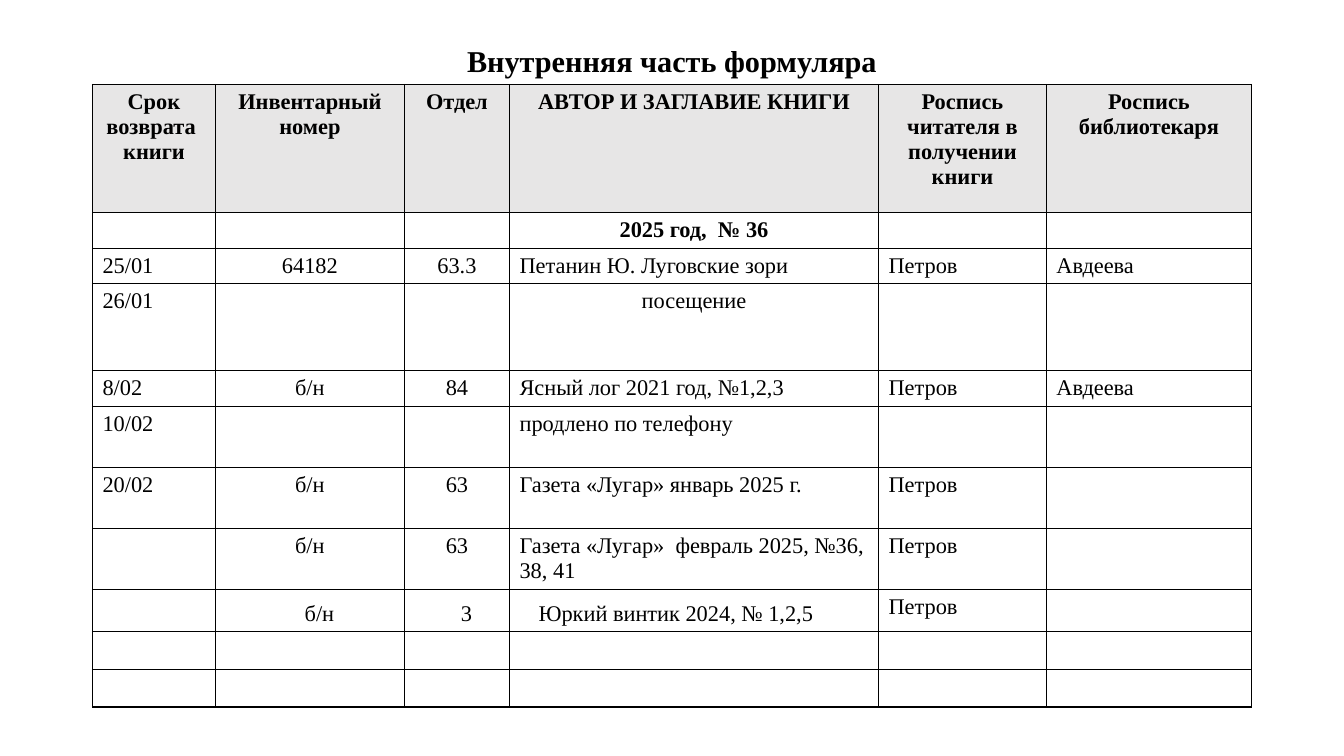
from dataclasses import dataclass

import pptx
import pptx.dml.color
import pptx.enum.text
import pptx.oxml
import pptx.oxml.ns
import pptx.util
from pptx.util import Cm

Align = pptx.enum.text.PP_ALIGN


@dataclass(frozen=True)
class Theme:
    font: str = "Times New Roman"
    ink: str = "000000"
    header_fill: str = "E7E6E6"
    body_fill: str = "FFFFFF"
    title_size: float = 21.6
    table_size: float = 16
    border_width: float = 1


COLUMN_WIDTHS = [3.1, 4.76, 2.65, 9.3, 4.23, 5.17]
ROW_HEIGHTS = [3.23, 0.9, 0.89, 2.19, 0.9, 1.54, 1.54, 1.54, 1.05, 0.95, 0.95]
CENTRED_COLUMNS = (1, 2)
TITLE_COLUMN = 3
YEAR_ROW, VISIT_ROW, INDENTED_ROW = 1, 3, 8

LOANS = [
    ["Срок\nвозврата \nкниги", "Инвентарный номер", "Отдел", "АВТОР И ЗАГЛАВИЕ КНИГИ",
     "Роспись читателя в получении книги", "Роспись библиотекаря"],
    ["", "", "", "2025 год,  № 36", "", ""],
    ["25/01", "64182", "63.3", "Петанин Ю. Луговские зори", "Петров", "Авдеева"],
    ["26/01", "", "", "посещение", "", ""],
    ["8/02", "б/н", "84", "Ясный лог 2021 год, №1,2,3", "Петров", "Авдеева"],
    ["10/02", "", "", "продлено по телефону", "", ""],
    ["20/02", "б/н", "63", "Газета «Лугар» январь 2025 г.", "Петров", ""],
    ["", "б/н", "63", "Газета «Лугар»  февраль 2025, №36, 38, 41", "Петров", ""],
    ["", "б/н", "3", "Юркий винтик 2024, № 1,2,5", "Петров", ""],
    [""] * 6,
    [""] * 6,
]


class SlideBuilder:
    def __init__(self, presentation, theme):
        self.theme = theme
        self.slide = presentation.slides.add_slide(presentation.slide_layouts[5])

    def style(self, paragraph, size, bold, alignment):
        paragraph.alignment = alignment
        font = paragraph.font
        font.name, font.size, font.bold = self.theme.font, pptx.util.Pt(size), bold
        font.color.rgb = pptx.dml.color.RGBColor.from_string(self.theme.ink)

    def title(self, text, left, top, width, height):
        title = self.slide.shapes.title
        title.left, title.top, title.width, title.height = map(Cm, (left, top, width, height))
        frame = title.text_frame
        frame.text = text
        frame.auto_size = pptx.enum.text.MSO_AUTO_SIZE.NONE
        frame.vertical_anchor = pptx.enum.text.MSO_ANCHOR.MIDDLE
        paragraph = frame.paragraphs[0]
        paragraph.line_spacing = 0.9
        self.style(paragraph, self.theme.title_size, True, Align.CENTER)

    def table(self, rows, left, top):
        table = self.slide.shapes.add_table(
            len(rows), len(COLUMN_WIDTHS), Cm(left), Cm(top),
            Cm(sum(COLUMN_WIDTHS)), Cm(sum(ROW_HEIGHTS))).table
        for column, width in zip(table.columns, COLUMN_WIDTHS):
            column.width = Cm(width)
        for row, height in zip(table.rows, ROW_HEIGHTS):
            row.height = Cm(height)
        for row_index, texts in enumerate(rows):
            for column_index, text in enumerate(texts):
                self.cell(table.cell(row_index, column_index), text, row_index, column_index)

    def cell(self, cell, text, row, column):
        is_header = row == 0
        is_centred = (row in (0, YEAR_ROW) or column in CENTRED_COLUMNS
                      or (row == VISIT_ROW and column == TITLE_COLUMN))
        is_indented = row == INDENTED_ROW and 1 <= column <= TITLE_COLUMN
        alignment = Align.CENTER if is_centred else Align.JUSTIFY if is_indented else Align.LEFT
        self.borders(cell)
        cell.fill.solid()
        cell.fill.fore_color.rgb = pptx.dml.color.RGBColor.from_string(
            self.theme.header_fill if is_header else self.theme.body_fill)
        cell.text = text
        for paragraph in cell.text_frame.paragraphs:
            self.style(paragraph, self.theme.table_size, row <= YEAR_ROW, alignment)
            if is_indented:
                paragraph.line_spacing = 1.28
                paragraph._p.get_or_add_pPr().set("indent", str(Cm(0.48)))

    def borders(self, cell):
        properties = cell._tc.get_or_add_tcPr()
        width = pptx.util.Pt(self.theme.border_width)
        for side in ("lnL", "lnR", "lnT", "lnB"):
            properties.append(pptx.oxml.parse_xml(
                f'<a:{side} {pptx.oxml.ns.nsdecls("a")} w="{width}"><a:solidFill>'
                f'<a:srgbClr val="{self.theme.ink}"/></a:solidFill></a:{side}>'))


def main():
    presentation = pptx.Presentation()
    presentation.slide_width, presentation.slide_height = Cm(33.87), Cm(19.05)
    builder = SlideBuilder(presentation, Theme())
    builder.title("Внутренняя часть формуляра", 2.33, 1.02, 29.21, 1.12)
    builder.table(LOANS, 2.33, 2.13)
    presentation.save("out.pptx")


if __name__ == "__main__":
    main()
